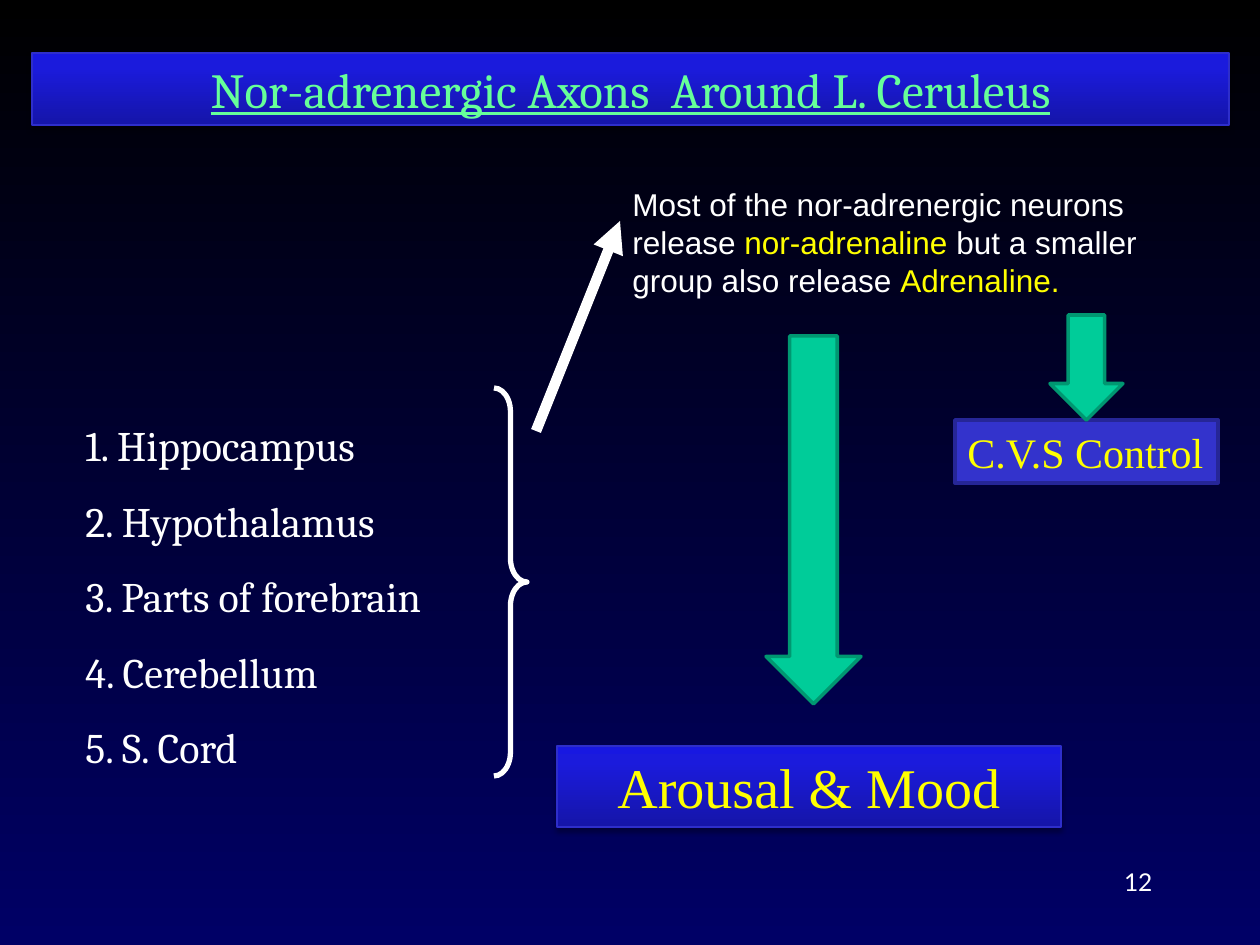
from collections import namedtuple
from copy import deepcopy
from dataclasses import dataclass

from pptx import Presentation
from pptx.dml.color import RGBColor
from pptx.enum.shapes import MSO_CONNECTOR as Connector, MSO_SHAPE as Shape
from pptx.enum.text import MSO_ANCHOR as Anchor, MSO_AUTO_SIZE as AutoSize, PP_ALIGN as Align
from pptx.oxml.ns import qn
from pptx.oxml.xmlchemy import OxmlElement
from pptx.util import Emu, Pt

EMU_PER_PX = 914400 / 126
Box = namedtuple("Box", "left top width height")
Style = namedtuple("Style", "font size color")


@dataclass(frozen=True)
class Theme:
    night = ((0, "000000"), (1, "000066"))
    banner = ((0, "1515A9"), (0.8, "1B1BDC"), (1, "1818E1"))
    banner_line = "2E2ECB"
    control = "3333CC"
    control_line = "262697"
    arrow = "00CC99"
    arrow_line = "009771"
    white = "FFFFFF"
    yellow = "FFFF00"
    title = Style("Cambria", 28, "66FF99")
    items = Style("Cambria", 24, "FFFFFF")
    note = Style("Arial", 18, "FFFFFF")
    note_key = Style("Arial", 18, "FFFF00")
    control_text = Style("Times New Roman", 24, "FFFF00")
    mood_text = Style("Times New Roman", 32, "FFFF00")
    number = Style("Lato", 14, "FFFFFF")


THEME = Theme()


def px(length):
    return Emu(round(length * EMU_PER_PX))


def rgb(color):
    return RGBColor.from_string(color)


def inside(box, left, top, width, height):
    return Box(box.left + left, box.top + top, width, height)


def set_gradient(fill, element, stops, angle):
    fill.gradient()
    fill.gradient_angle = angle
    stop_list = next(element.iter(qn("a:gsLst")))
    while len(stop_list) < len(stops):
        stop_list.append(deepcopy(stop_list[-1]))
    for stop, (position, color) in zip(fill.gradient_stops, stops):
        stop.position = position
        stop.color.rgb = rgb(color)


def set_line(line, color, width):
    line.color.rgb = rgb(color)
    line.width = Pt(width)


def add_spans(para, style, text, underline=None):
    span = para.add_run()
    span.text = text
    span.font.name = style.font
    span.font.size = Pt(style.size)
    span.font.color.rgb = rgb(style.color)
    span.font.underline = underline


def prepare_frame(shape, wrap=True):
    frame = shape.text_frame
    frame.word_wrap = wrap
    frame.auto_size = AutoSize.NONE if wrap else AutoSize.SHAPE_TO_FIT_TEXT
    frame.vertical_anchor = Anchor.TOP
    return frame


def add_text_box(page, box, wrap=True):
    return prepare_frame(page.shapes.add_textbox(*map(px, box)), wrap)


def add_plain_shape(page, kind, box, line_color, line_width, fill_color=None):
    shape = page.shapes.add_shape(kind, *map(px, box))
    shape.shadow.inherit = False
    if fill_color:
        shape.fill.solid()
        shape.fill.fore_color.rgb = rgb(fill_color)
    else:
        shape.fill.background()
    set_line(shape.line, line_color, line_width)
    return shape


def add_shadow(shape):
    shadow = OxmlElement("a:outerShdw")
    settings = {"blurRad": Pt(3.1), "dist": Pt(1.8), "dir": 5400000, "rotWithShape": 0}
    for name, value in settings.items():
        shadow.set(name, str(int(value)))
    color = OxmlElement("a:srgbClr")
    color.set("val", "000000")
    alpha = OxmlElement("a:alpha")
    alpha.set("val", "35000")
    color.append(alpha)
    shadow.append(color)
    shape.element.spPr.find(qn("a:effectLst")).append(shadow)


def add_banner(page, box, style, text, underline=None):
    banner = add_plain_shape(page, Shape.RECTANGLE, box, THEME.banner_line, 0.75)
    set_gradient(banner.fill, banner.element, THEME.banner, 90)
    add_shadow(banner)
    para = prepare_frame(banner).paragraphs[0]
    para.alignment = Align.CENTER
    add_spans(para, style, text, underline)


def add_down_arrow(page, box):
    add_plain_shape(page, Shape.DOWN_ARROW, box, THEME.arrow_line, 2, THEME.arrow)


def add_targets(page, box):
    names = ("Hippocampus", "Hypothalamus", "Parts of forebrain", "Cerebellum", "S. Cord")
    frame = add_text_box(page, inside(box, 0, 0, 399, 386), wrap=False)
    for number, name in enumerate(names, 1):
        para = frame.paragraphs[0] if number == 1 else frame.add_paragraph()
        para.line_spacing = 1.5
        add_spans(para, THEME.items, f"{number}. {name}")
    brace_box = inside(box, box.width - 33, 0, 33, box.height)
    brace = add_plain_shape(page, Shape.RIGHT_BRACE, brace_box, THEME.white, 3)
    brace.adjustments[0] = 0.72


def add_release(page, box):
    para = add_text_box(page, inside(box, 84, 0, 598, 183)).paragraphs[0]
    add_spans(para, THEME.note, "Most of the nor-adrenergic neurons release ")
    add_spans(para, THEME.note_key, "nor-adrenaline")
    add_spans(para, THEME.note, " but a smaller group also release ")
    add_spans(para, THEME.note_key, "Adrenaline.")
    ends = (box.left, box.top + box.height, box.left + 84, box.top + 42)
    pointer = page.shapes.add_connector(Connector.STRAIGHT, *map(px, ends))
    set_line(pointer.line, THEME.white, 6)
    pointer.element.spPr.append(OxmlElement("a:effectLst"))
    head = OxmlElement("a:tailEnd")
    head.set("type", "triangle")
    pointer.element.spPr.find(qn("a:ln")).append(head)


def add_control(page, box):
    label_box = inside(box, 0, 105, box.width, 63)
    label = add_plain_shape(page, Shape.RECTANGLE, label_box, THEME.control_line, 2, THEME.control)
    para = prepare_frame(label, wrap=False).paragraphs[0]
    para.alignment = Align.LEFT
    add_spans(para, THEME.control_text, "C.V.S Control")
    add_down_arrow(page, inside(box, 95, 0, 73, 105))


def add_mood(page, box):
    add_banner(page, inside(box, 0, 410, box.width, 81), THEME.mood_text, "Arousal & Mood")
    add_down_arrow(page, inside(box, 209, 0, 95, 368))


def add_page_number(page, box):
    para = add_text_box(page, box).paragraphs[0]
    para.alignment = Align.RIGHT
    add_spans(para, THEME.number, "12")


def main():
    deck = Presentation()
    deck.slide_width, deck.slide_height = px(1260), px(945)
    page = deck.slides.add_slide(deck.slide_layouts[6])
    set_gradient(page.background.fill, page.element, THEME.night, 270)
    add_page_number(page, Box(903, 861, 262, 63))
    title = "Nor-adrenergic Axons  Around L. Ceruleus"
    add_banner(page, Box(32, 53, 1197, 72), THEME.title, title, underline=True)
    add_targets(page, Box(73, 388, 454, 388))
    add_release(page, Box(536, 179, 682, 252))
    add_control(page, Box(955, 315, 263, 168))
    add_mood(page, Box(557, 336, 504, 491))
    deck.save("out.pptx")


if __name__ == "__main__":
    main()
